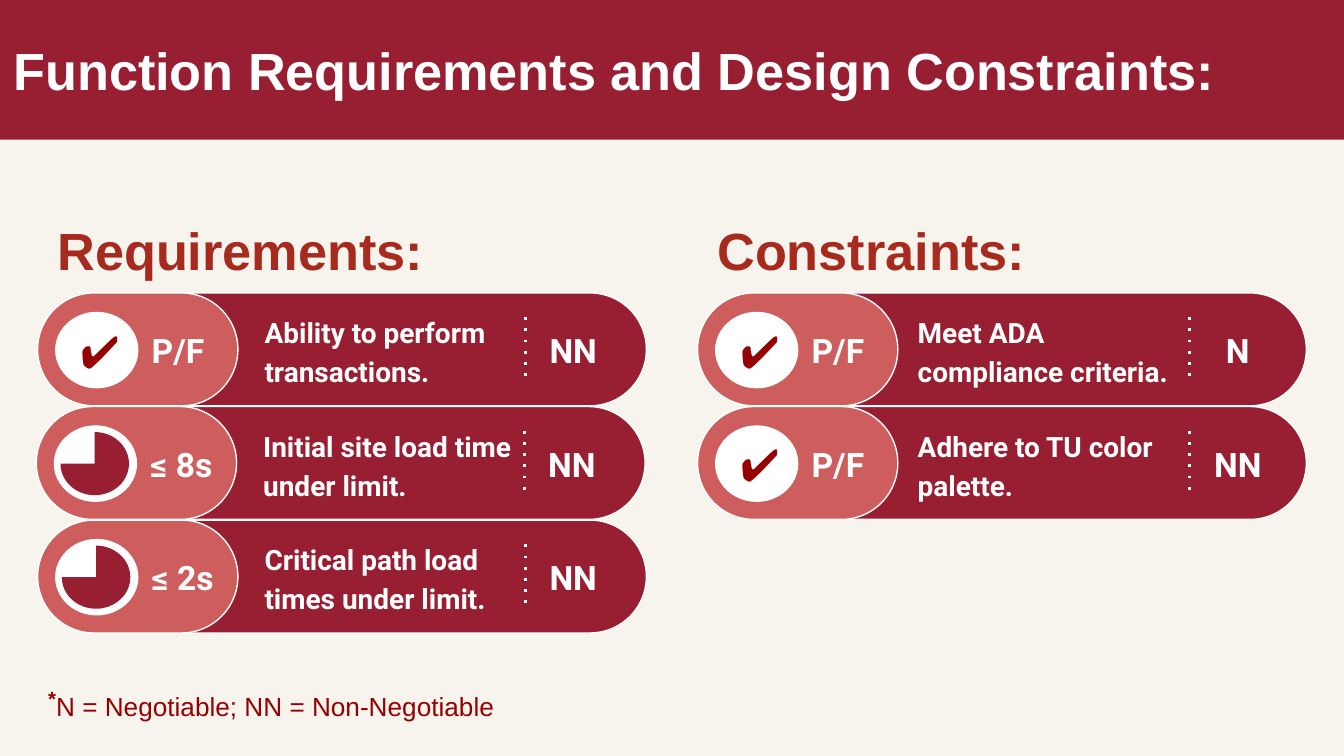
from dataclasses import dataclass

from lxml.etree import SubElement
from pptx import Presentation
from pptx.dml.color import RGBColor
from pptx.enum.shapes import MSO_CONNECTOR as Conn, MSO_SHAPE as Geo
from pptx.enum.text import MSO_ANCHOR as Anchor, MSO_AUTO_SIZE as Fit, PP_ALIGN as Align
from pptx.oxml.ns import qn
from pptx.util import Inches, Pt


@dataclass(frozen=True)
class Theme:
    paper: str = "F7F4ED"
    wine: str = "981E32"
    rose: str = "CE5D5D"
    rust: str = "A72A1E"
    blood: str = "960000"
    white: str = "FFFFFF"
    sans: str = "Arial"
    body: str = "Roboto"
    head: int = 28
    tick: int = 24
    star: int = 19
    mark: int = 18
    label: int = 15
    note: int = 14


class Deck:
    """Draws the elements of a slide in one theme."""

    def __init__(self, theme):
        self.theme = theme
        self.prs = Presentation()
        self.prs.slide_width, self.prs.slide_height = Inches(10), Inches(10 * 9 / 16)
        self.slide = self.prs.slides.add_slide(self.prs.slide_layouts[5])
        self.host = self.slide.shapes
        self.paint(self.slide.background.fill, theme.paper)

    def paint(self, fill, color):
        fill.solid()
        fill.fore_color.rgb = RGBColor.from_string(color)

    def frame(self, shape, anchor=Anchor.MIDDLE, align=Align.LEFT, space=None):
        frame = shape.text_frame
        frame.word_wrap, frame.auto_size = True, Fit.NONE
        frame.vertical_anchor = anchor
        frame.margin_left = frame.margin_right = Inches(0.1)
        frame.margin_top = frame.margin_bottom = Inches(0.1)
        para = frame.paragraphs[0]
        para.alignment = align
        if space:
            para.line_spacing = space
        return para

    def run(self, para, text, size, color, face, bold=True, rise=0):
        run = para.add_run()
        run.text = text
        font = run.font
        font.size, font.name, font.bold = Pt(size), face, bold
        font.color.rgb = RGBColor.from_string(color)
        if rise:
            run._r.get_or_add_rPr().set("baseline", str(rise * 1000))

    def title(self, text):
        t, shape = self.theme, self.slide.shapes.title
        shape.left, shape.top = Inches(0), Inches(0)
        shape.width, shape.height = Inches(10), Inches(1.04)
        self.paint(shape.fill, t.wine)
        self.run(self.frame(shape), text, t.head, t.white, t.sans)

    def box(self, x, y, w, h, **style):
        shape = self.host.add_textbox(Inches(x), Inches(y), Inches(w), Inches(h))
        return self.frame(shape, **style)

    def shape(self, geo, x, y, w, h, fill, edge=None):
        shape = self.host.add_shape(geo, Inches(x), Inches(y), Inches(w), Inches(h))
        shape.shadow.inherit = False
        self.paint(shape.fill, fill)
        if edge:
            self.paint(shape.line.fill, edge)
            shape.line.width = Pt(0.75)
        else:
            shape.line.fill.background()
        return shape

    def pill(self, x, y, w, fill):
        pill = self.shape(Geo.ROUNDED_RECTANGLE, x, y, w, 0.84, fill, self.theme.white)
        pill.adjustments[0] = 0.5

    def rule(self, x, top, end):
        line = self.host.add_connector(
            Conn.STRAIGHT, Inches(x), Inches(top), Inches(x), Inches(end))
        self.paint(line.line.fill, self.theme.white)
        line.line.width = Pt(1.5)
        props = line.line._get_or_add_ln()
        SubElement(props, qn("a:prstDash")).set("val", "dot")
        SubElement(props.getparent(), qn("a:effectLst"))

    def icon(self, x, y, timed):
        t = self.theme
        disc = self.shape(Geo.OVAL, x, y, 0.62, 0.57, t.white)
        if timed:
            pie = self.shape(Geo.PIE, x + 0.05, y + 0.05, 0.51, 0.47, t.wine)
            pie.adjustments[0], pie.adjustments[1] = 162, 108
        else:
            para = self.frame(disc, align=Align.CENTER)
            self.run(para, "✔", t.tick, t.blood, t.sans, bold=False)

    def row(self, x, y, test, text, rank, grid):
        t = self.theme
        inset, split, align = grid
        self.host = self.slide.shapes.add_group_shape().shapes
        self.pill(x, y, 4.53, t.wine)
        self.pill(x, y, 1.49, t.rose)
        self.icon(x + 0.13, y + 0.14, test != "P/F")
        para = self.box(x + inset, y + 0.06, 2.12, 0.72, space=1.15)
        self.run(para, text, t.label, t.white, t.body)
        para = self.box(x + 0.75, y + 0.21, 0.69, 0.43)
        self.run(para, test, t.mark, t.white, t.body)
        self.rule(x + split, y + 0.18, y + 0.67)
        para = self.box(x + 3.71, y + 0.21, 0.62, 0.43, align=align)
        self.run(para, rank, t.mark, t.white, t.body)
        self.host = self.slide.shapes

    def column(self, x, head, rows, grid):
        t = self.theme
        para = self.box(x + 0.05, 1.52, 3.57, 0.67)
        self.run(para, head, t.head, t.rust, t.sans)
        for i, (shift, test, text, rank) in enumerate(rows):
            self.row(x + shift, 2.18 + 1.69 * i / 2, test, text, rank, grid)

    def note(self, sign, text):
        t = self.theme
        para = self.box(0.26, 4.97, 5.54, 0.66, anchor=Anchor.TOP)
        self.run(para, sign, t.star, t.blood, t.sans, rise=30)
        self.run(para, text, t.note, t.blood, t.sans, bold=False)


NEEDS = [
    (0, "P/F", "Ability to perform transactions.", "NN"),
    (-0.01, "≤ 8s", "Initial site load time under limit.", "NN"),
    (0, "≤ 2s", "Critical path load times under limit.", "NN"),
]
LIMITS = [
    (0, "P/F", "Meet ADA compliance criteria.", "N"),
    (0, "P/F", "Adhere to TU color palette.", "NN"),
]


def main():
    deck = Deck(Theme())
    deck.title("Function Requirements and Design Constraints:")
    deck.column(5.19, "Constraints:", LIMITS, (1.54, 3.66, Align.CENTER))
    deck.column(0.28, "Requirements:", NEEDS, (1.59, 3.63, Align.LEFT))
    deck.note("*", "N = Negotiable; NN = Non-Negotiable")
    deck.prs.save("out.pptx")


if __name__ == "__main__":
    main()
